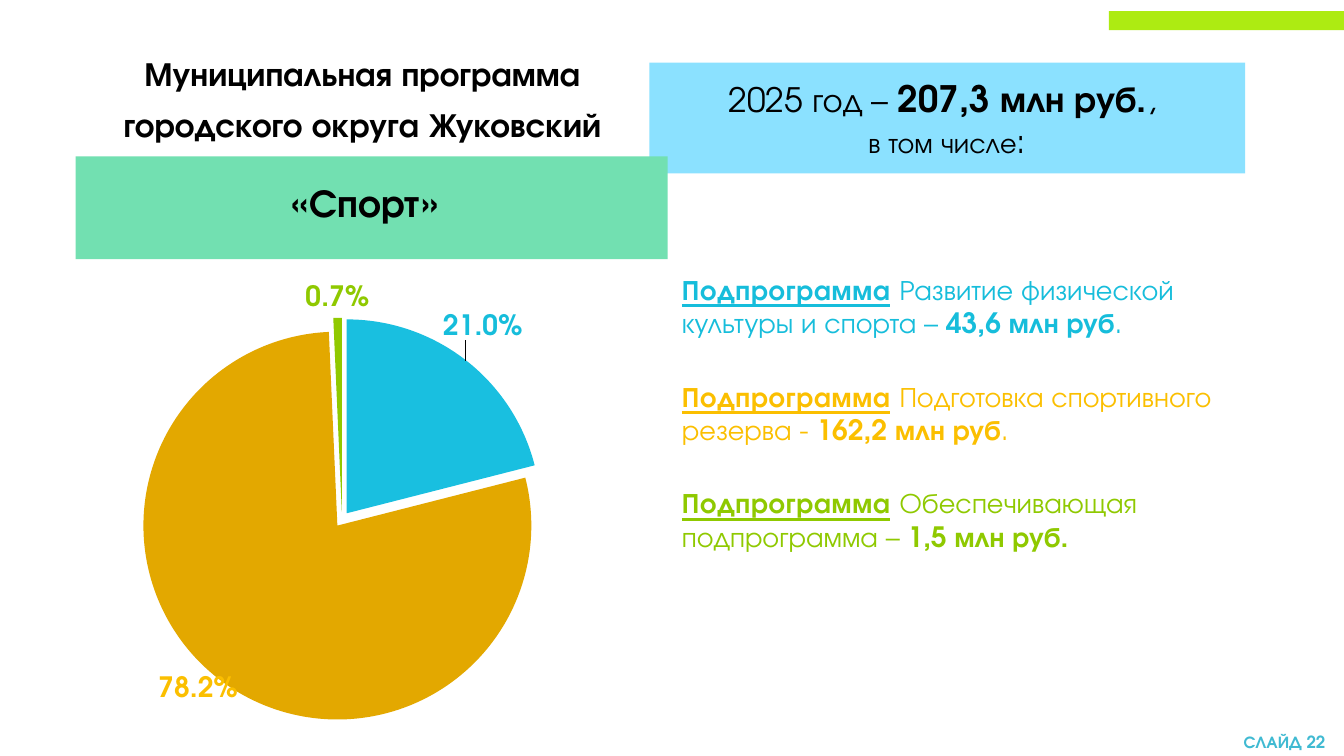
"""Build the slide on the 2025 budget of the municipal programme «Спорт»."""
import lxml.etree
import pptx
import pptx.chart.data
import pptx.dml.color
import pptx.enum.chart
import pptx.enum.shapes
import pptx.enum.text
import pptx.oxml
import pptx.oxml.ns
import pptx.util

FONT = "TeX Gyre Adventor"
COLORS = {
    "accent": "ADEB12", "total": "8BE1FF", "sport": "72E0B1",
    "text": "000000", "number": "40BAD2",
    "culture": "16BDDB", "reserve": "FBBF00", "support": "8FC900",
    "culture slice": "19BFE0", "reserve slice": "E3A800", "support slice": "90C900",
}
CENTER = pptx.enum.text.PP_ALIGN.CENTER
MIDDLE = pptx.enum.text.MSO_ANCHOR.MIDDLE
RECTANGLE = pptx.enum.shapes.MSO_SHAPE.RECTANGLE

deck = pptx.Presentation()
deck.slide_width = pptx.util.Inches(13.33)
deck.slide_height = pptx.util.Inches(7.5)
slide = deck.slides.add_slide(deck.slide_layouts[5])


def area(left, top, width, height):
    """Turn percentages of the slide into a position and a size."""
    sides = (deck.slide_width, deck.slide_height) * 2
    return [int(side * share / 100) for side, share in zip(sides, (left, top, width, height))]


def style(font, size, color, bold=False):
    """Give a font its face, size, colour and weight."""
    font.name = FONT
    font.size = pptx.util.Pt(size)
    font.bold = bold
    font.color.rgb = pptx.dml.color.RGBColor.from_string(COLORS[color])


heading = slide.shapes.title
heading.left, heading.top, heading.width, heading.height = area(5.63, 4, 42.68, 17.6)
heading.text_frame.text = "Муниципальная программа\nгородского округа Жуковский"
heading.text_frame.vertical_anchor = MIDDLE
heading.text_frame.auto_size = pptx.enum.text.MSO_AUTO_SIZE.NONE
for line in heading.text_frame.paragraphs:
    line.alignment = CENTER
    line.line_spacing = 1.1
    style(line.runs[0].font, 24, "text", True)
heading.text_frame.paragraphs[1].space_before = pptx.util.Pt(4.8)

subprograms = [
    ("culture", "Развитие физической культуры и спорта – ", "43,6 млн руб", "."),
    ("reserve", "Подготовка спортивного резерва - ", "162,2 млн руб", "."),
    ("support", "Обеспечивающая подпрограмма – ", "1,5 млн руб.", ""),
]
for row, (color, purpose, amount, ending) in enumerate(subprograms):
    entry = slide.shapes.add_textbox(*area(50, 35.33 + row * 14.13, 44.5, 10.27)).text_frame
    entry.word_wrap = True
    entry.vertical_anchor = MIDDLE
    entry.text = "Подпрограмма"
    line = entry.paragraphs[0]
    for part in (" ", purpose, amount, ending):
        if part:
            line.add_run().text = part
    for run in line.runs:
        style(run.font, 20, color, run.text not in (purpose, ending))
    line.runs[0].font.underline = True
    for run in line.runs[:2]:
        run._r.get_or_add_rPr().set("spc", "50")

shares = pptx.chart.data.CategoryChartData(number_format='0.0"%"')
shares.categories = ["1", "2", "3"]
shares.add_series("Series 1", (21, 78.2, 0.7))
pie = slide.shapes.add_chart(
    pptx.enum.chart.XL_CHART_TYPE.PIE, *area(0, 34.13, 49.42, 65.87), shares).chart
pie.has_title = False
pie.has_legend = False
style(pie.font, 10, "text", True)
plot = pie.plots[0]
plot.vary_by_categories = True
slices = plot.series[0]
labels = slices.data_labels
labels.show_value = True
labels.number_format = '0.0"%"'
labels.number_format_is_linked = False
labels.position = pptx.enum.chart.XL_LABEL_POSITION.OUTSIDE_END
style(labels.font, 20, "text", True)
for index, (color, *_) in enumerate(subprograms):
    point = slices.points[index]
    point.format.fill.solid()
    point.format.fill.fore_color.rgb = pptx.dml.color.RGBColor.from_string(COLORS[color + " slice"])
    point.format.line.fill.background()
    style(point.data_label.font, 20, color, True)
    point.data_label.position = pptx.enum.chart.XL_LABEL_POSITION.OUTSIDE_END

CHART_NS = pptx.oxml.ns.nsdecls("c")
explosion = pptx.oxml.parse_xml(f'<c:explosion {CHART_NS} val="4"/>')
slices._element.xpath("c:tx")[0].addnext(explosion)
offsets = [(-0.04, -0.03), (0.03, -0.02), (0, 0)]
for label, (x, y) in zip(slices._element.xpath("c:dLbls/c:dLbl"), offsets):
    label.insert(1, pptx.oxml.parse_xml(
        f"<c:numFmt {CHART_NS} formatCode='0.0\"%\"' sourceLinked='0'/>"))
    if x:
        label.insert(1, pptx.oxml.parse_xml(
            f'<c:layout {CHART_NS}><c:manualLayout><c:x val="{x}"/><c:y val="{y}"/>'
            '</c:manualLayout></c:layout>'))
plot_area = pie._chartSpace.xpath("c:chart/c:plotArea")[0]
for layout in plot_area.xpath("c:layout"):
    plot_area.remove(layout)
plot_area.insert(0, pptx.oxml.parse_xml(
    f'<c:layout {CHART_NS}><c:manualLayout><c:layoutTarget val="inner"/>'
    '<c:xMode val="edge"/><c:yMode val="edge"/><c:x val="0.1"/><c:y val="0.12"/>'
    '<c:w val="0.83"/><c:h val="0.81"/></c:manualLayout></c:layout>'))

panels = {}
for color, place in {
    "accent": (82.5, 1.47, 17.5, 2.53),
    "total": (48.31, 8.27, 44.34, 14.67),
    "sport": (5.63, 20.67, 44.04, 13.6),
}.items():
    panel = slide.shapes.add_shape(RECTANGLE, *area(*place))
    panel.shadow.inherit = False
    panel.fill.solid()
    panel.fill.fore_color.rgb = pptx.dml.color.RGBColor.from_string(COLORS[color])
    panel.line.fill.background()
    panels[color] = panel

total = panels["total"].text_frame
total.vertical_anchor = MIDDLE
total.text = "2025 год – \nв том числе"
year, including = total.paragraphs
for part in ("207,3 млн руб.", ", "):
    year.add_run().text = part
including.add_run().text = ":"
for line, sizes in ((year, (24, 26, 24)), (including, (20, 24))):
    line.alignment = CENTER
    for run, size in zip(line.runs, sizes):
        style(run.font, size, "text", size == 26)

for text, place, size, color in (
    ("«Спорт»", (5.33, 23.6, 43.66, 6.27), 28, "text"),
    ("СЛАЙД 22", (91.15, 96.27, 8.85, 3.73), 12, "number"),
):
    caption = slide.shapes.add_textbox(*area(*place)).text_frame
    caption.word_wrap = True
    caption.vertical_anchor = MIDDLE
    caption.margin_top = caption.margin_bottom = 0
    caption.text = text
    caption.paragraphs[0].alignment = CENTER
    style(caption.paragraphs[0].runs[0].font, size, color, True)

deck.save("out.pptx")
